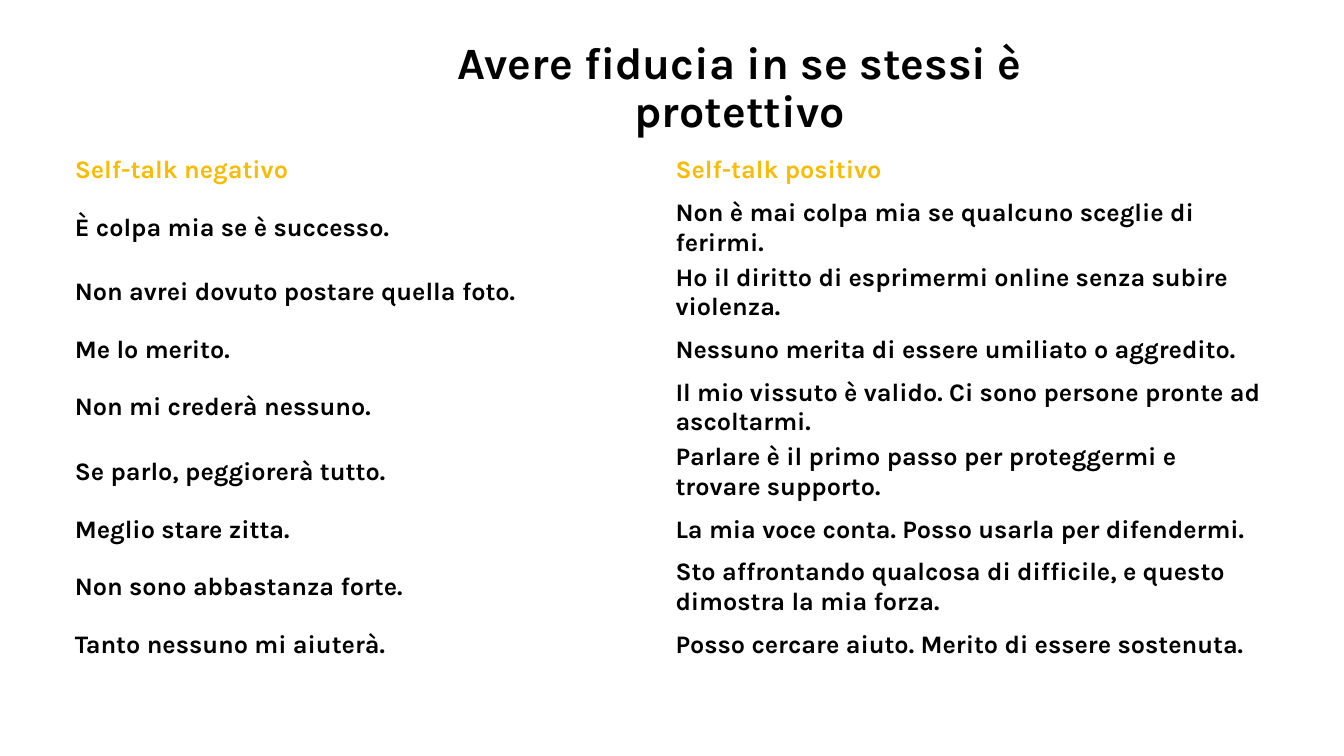
from pptx import Presentation
from pptx.dml.color import RGBColor
from pptx.enum.text import MSO_ANCHOR as Anchor, PP_ALIGN as Align
from pptx.util import Pt

BLACK = RGBColor(0x00, 0x00, 0x00)
YELLOW = RGBColor(0xFA, 0xBB, 0x05)
FONT = "Karla"

TITLE = "Avere fiducia in se stessi è protettivo"
HEADINGS = ("Self-talk negativo", "Self-talk positivo")
SELF_TALK = [
    ("È colpa mia se è successo.",
     "Non è mai colpa mia se qualcuno sceglie di ferirmi."),
    ("Non avrei dovuto postare quella foto.",
     "Ho il diritto di esprimermi online senza subire violenza."),
    ("Me lo merito.",
     "Nessuno merita di essere umiliato o aggredito."),
    ("Non mi crederà nessuno.",
     "Il mio vissuto è valido. Ci sono persone pronte ad ascoltarmi."),
    ("Se parlo, peggiorerà tutto.",
     "Parlare è il primo passo per proteggermi e trovare supporto."),
    ("Meglio stare zitta.",
     "La mia voce conta. Posso usarla per difendermi."),
    ("Non sono abbastanza forte.",
     "Sto affrontando qualcosa di difficile, e questo dimostra la mia forza."),
    ("Tanto nessuno mi aiuterà.",
     "Posso cercare aiuto. Merito di essere sostenuta."),
]
ROW_HEIGHT = 36
LAST_ROW_HEIGHT = 26


def add_bold_run(paragraph, text, size, color):
    run = paragraph.add_run()
    run.text = text
    run.font.name = FONT
    run.font.size = Pt(size)
    run.font.bold = True
    run.font.color.rgb = color


def add_title(slide):
    title = slide.shapes.add_textbox(Pt(249), Pt(42.5), Pt(559), Pt(42.5))
    frame = title.text_frame
    frame.word_wrap = True
    frame.vertical_anchor = Anchor.MIDDLE
    heading = frame.paragraphs[0]
    heading.alignment = Align.CENTER
    heading.line_spacing = 0.9
    add_bold_run(heading, TITLE, 32, BLACK)


def fill_cell(cell, text, color):
    cell.fill.background()
    cell.vertical_anchor = Anchor.MIDDLE
    cell.margin_left = cell.margin_right = Pt(3.75)
    cell.margin_top = cell.margin_bottom = Pt(1.5)
    if text:
        add_bold_run(cell.text_frame.paragraphs[0], text, 18, color)


def add_self_talk_table(slide):
    rows = [HEADINGS, *SELF_TALK, ("", "")]
    height = ROW_HEIGHT * (len(rows) - 1) + LAST_ROW_HEIGHT
    table = slide.shapes.add_table(
        len(rows), len(HEADINGS), Pt(49.7), Pt(103.7), Pt(858.2), Pt(height)
    ).table
    table.first_row = False
    table.horz_banding = False
    for row, texts in zip(table.rows, rows):
        row.height = Pt(ROW_HEIGHT)
        color = YELLOW if texts is HEADINGS else BLACK
        for cell, text in zip(row.cells, texts):
            fill_cell(cell, text, color)
    table.rows[len(rows) - 1].height = Pt(LAST_ROW_HEIGHT)


def main():
    deck = Presentation()
    deck.slide_width = Pt(960)
    deck.slide_height = Pt(540)
    slide = deck.slides.add_slide(deck.slide_layouts[6])
    add_title(slide)
    add_self_talk_table(slide)
    deck.save("out.pptx")


if __name__ == "__main__":
    main()
